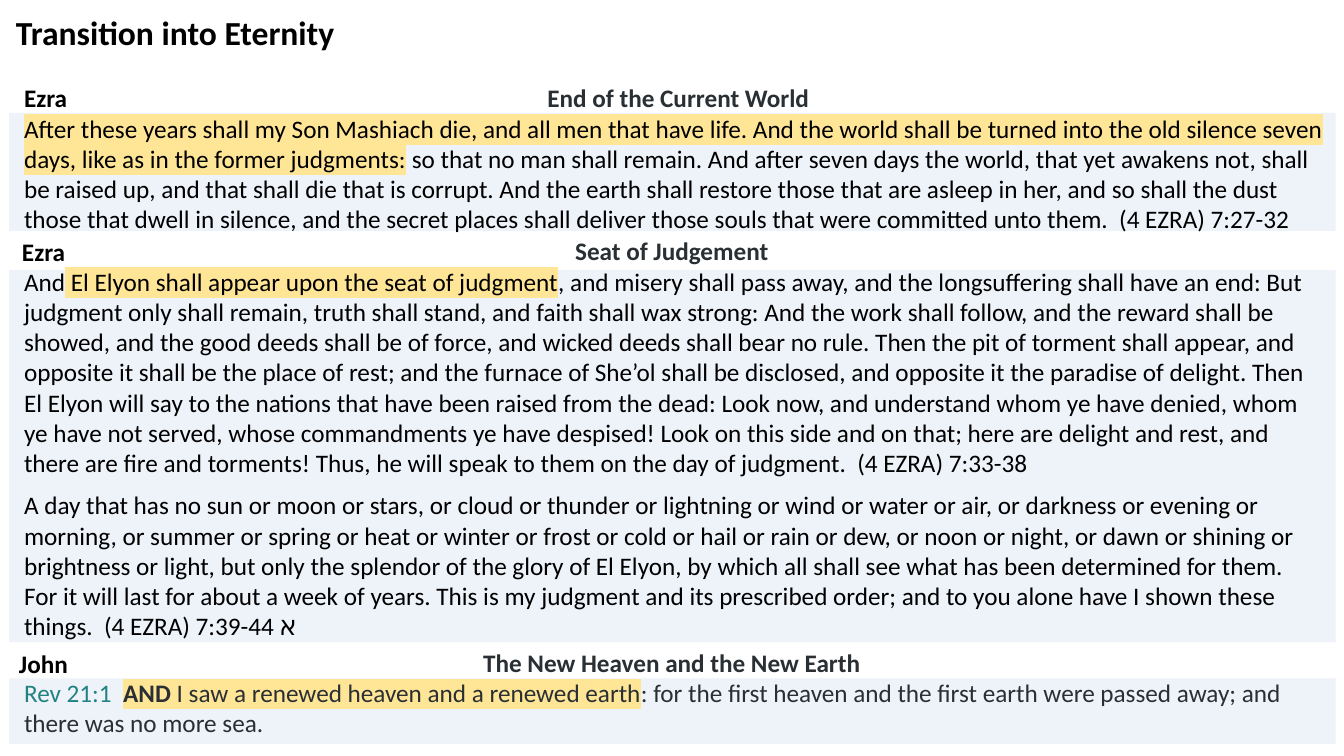
"""Build the "Transition into Eternity" slide."""
from dataclasses import dataclass

from lxml.etree import SubElement
from pptx import Presentation
from pptx.dml.color import RGBColor
from pptx.enum.shapes import MSO_SHAPE as Preset
from pptx.enum.text import MSO_AUTO_SIZE as AutoSize, PP_ALIGN as Align
from pptx.oxml.ns import qn
from pptx.util import Emu, Pt

PX = 9144
FONT = "Calibri"
BLACK, INK, TEAL = "000000", "292F33", "218282"
BAND, HIGHLIGHT, WHITE = "EEF2F9", "FFE697", "FFFFFF"


@dataclass(frozen=True)
class Box:
    left: int
    top: int
    width: int
    height: int


@dataclass(frozen=True)
class Span:
    text: str
    color: str = BLACK
    bold: bool = False
    marked: bool = False
    size: int = 18


@dataclass(frozen=True)
class Line:
    spans: tuple[Span, ...]
    align: Align = Align.LEFT
    before: float = 0
    spacing: float = 1.0


@dataclass(frozen=True)
class Passage:
    heading: str
    speaker: str
    band: Box
    body: Box
    label: Box
    lines: tuple[Line, ...]


PASSAGES = (
    Passage(
        "End of the Current World", "Ezra",
        Box(9, 112, 1316, 117), Box(14, 77, 1318, 162), Box(14, 77, 120, 40),
        (Line((
            Span("After these years shall my Son Mashiach die, and all men that have life. "
                 "And the world shall be turned into the old silence seven days, "
                 "like as in the former judgments:", marked=True),
            Span(" so that no man shall remain. And after seven days the world, that yet "
                 "awakens not, shall be raised up, and that shall die that is corrupt. "
                 "And the earth shall restore those that are asleep in her, and so shall "
                 "the dust those that dwell in silence, and the secret places shall deliver "
                 "those souls that were committed unto them.  (4 EZRA) 7:27-32"),
        )),),
    ),
    Passage(
        "Seat of Judgement", "Ezra",
        Box(9, 268, 1316, 369), Box(14, 229, 1305, 417), Box(12, 230, 120, 40),
        (
            Line((
                Span("And"),
                Span(" El Elyon shall appear upon the seat of judgment", marked=True),
                Span(", and misery shall pass away, and the longsuffering shall have an end: "
                     "But judgment only shall remain, truth shall stand, and faith shall wax "
                     "strong: And the work shall follow, and the reward shall be showed, and "
                     "the good deeds shall be of force, and wicked deeds shall bear no rule. "
                     "Then the pit of torment shall appear, and opposite it shall be the place "
                     "of rest; and the furnace of She’ol shall be disclosed, and opposite it "
                     "the paradise of delight. Then El Elyon will say to the nations that have "
                     "been raised from the dead: Look now, and understand whom ye have denied, "
                     "whom ye have not served, whose commandments ye have despised! Look on "
                     "this side and on that; here are delight and rest, and there are fire and "
                     "torments! Thus, he will speak to them on the day of judgment.  "
                     "(4 EZRA) 7:33-38"),
            )),
            Line((
                Span("A day that has no sun or moon or stars, or cloud or thunder or lightning "
                     "or wind or water or air, or darkness or evening or morning, or summer or "
                     "spring or heat or winter or frost or cold or hail or rain or dew, or noon "
                     "or night, or dawn or shining or brightness or light, but only the "
                     "splendor of the glory of El Elyon, by which all shall see what has been "
                     "determined for them. For it will last for about a week of years. This is "
                     "my judgment and its prescribed order; and to you alone have I shown these "
                     "things.  (4 EZRA) 7:39-44 א"),
            ), before=8.5),
        ),
    ),
    Passage(
        "The New Heaven and the New Earth", "John",
        Box(9, 673, 1316, 65), Box(14, 637, 1305, 101), Box(9, 638, 120, 40),
        (Line((
            Span("Rev 21:1  ", TEAL),
            Span("AND ", INK, bold=True, marked=True),
            Span("I saw a renewed heaven and a renewed earth", INK, marked=True),
            Span(": for the first heaven and the first earth were passed away; "
                 "and there was no more sea.", INK),
        )),),
    ),
)


def rgb(color: str) -> RGBColor:
    """Turn a hex string into a colour."""
    return RGBColor.from_string(color)


def place(box: Box) -> tuple[Emu, ...]:
    """Turn a box in px into EMU lengths."""
    return tuple(Emu(side * PX) for side in (box.left, box.top, box.width, box.height))


def add_span(paragraph, span: Span) -> None:
    """Append one formatted run, highlighted when marked."""
    run = paragraph.add_run()
    run.text = span.text
    run.font.size = Pt(span.size)
    run.font.bold = span.bold
    run.font.color.rgb = rgb(span.color)
    if span.marked:
        properties = run.font._element
        highlight = SubElement(properties, qn("a:highlight"))
        SubElement(highlight, qn("a:srgbClr")).set("val", HIGHLIGHT)
        properties.find(qn("a:solidFill")).addnext(highlight)
    run.font.name = FONT


def add_text(slide, box: Box, lines: tuple[Line, ...], fit: AutoSize) -> None:
    """Add a wrapping text box with one paragraph per line."""
    text_frame = slide.shapes.add_textbox(*place(box)).text_frame
    text_frame.word_wrap = True
    text_frame.auto_size = fit
    for index, line in enumerate(lines):
        paragraph = text_frame.add_paragraph() if index else text_frame.paragraphs[0]
        paragraph.alignment = line.align
        paragraph.space_before = Pt(line.before)
        paragraph.line_spacing = line.spacing
        for span in line.spans:
            add_span(paragraph, span)


def add_band(slide, box: Box) -> None:
    """Add the pale rectangle behind a passage."""
    shape = slide.shapes.add_shape(Preset.RECTANGLE, *place(box))
    shape.shadow.inherit = False
    shape.fill.solid()
    shape.fill.fore_color.rgb = rgb(BAND)
    shape.line.fill.background()


def main() -> None:
    """Draw the slide and save it."""
    presentation = Presentation()
    presentation.slide_width, presentation.slide_height = Emu(12192000), Emu(750 * PX)
    slide = presentation.slides.add_slide(presentation.slide_layouts[6])
    slide.background.fill.solid()
    slide.background.fill.fore_color.rgb = rgb(WHITE)

    title = Line((Span("Transition into Eternity", bold=True, size=24),), spacing=0.9)
    add_text(slide, Box(6, 11, 1288, 39), (title,), AutoSize.NONE)
    for passage in PASSAGES:
        add_band(slide, passage.band)
    for passage in PASSAGES:
        heading = Line((Span(passage.heading, INK, bold=True),), Align.CENTER)
        speaker = Line((Span(passage.speaker, bold=True),))
        add_text(slide, passage.body, (heading, *passage.lines), AutoSize.SHAPE_TO_FIT_TEXT)
        add_text(slide, passage.label, (speaker,), AutoSize.SHAPE_TO_FIT_TEXT)
    presentation.save("out.pptx")


if __name__ == "__main__":
    main()
